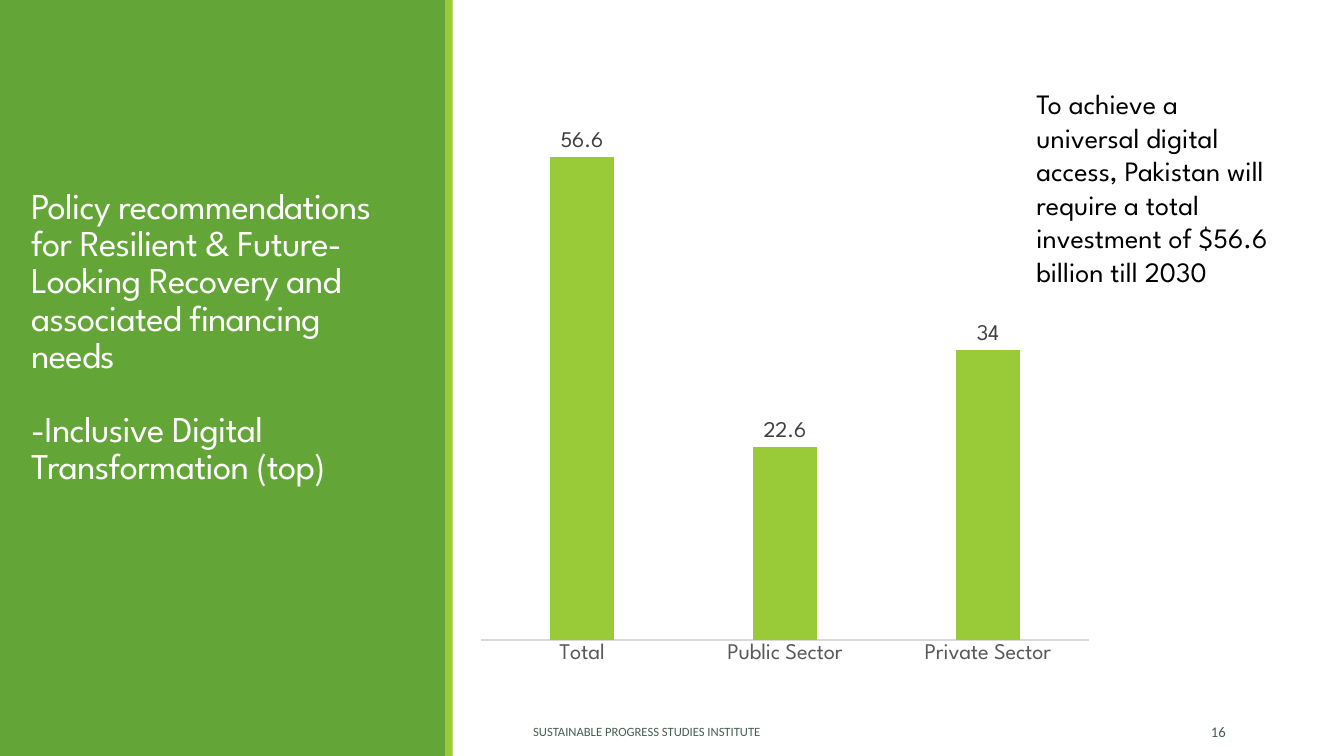
from pptx import Presentation, util as u
from pptx.chart.data import CategoryChartData
from pptx.dml.color import RGBColor
from pptx.enum import chart as ch, shapes, text

WIDTH, HEIGHT = u.Inches(13.33), u.Inches(7.5)
COLUMNS, ROWS = 16, 9

GREEN = RGBColor(0x63, 0xA5, 0x37)
LIME = RGBColor(0x99, 0xCB, 0x38)
WHITE = RGBColor(0xFF, 0xFF, 0xFF)
BLACK = RGBColor(0, 0, 0)
SLATE = RGBColor(0x45, 0x5F, 0x51)
AXIS_GREY = RGBColor(0xD9, 0xD9, 0xD9)
CATEGORY_GREY = RGBColor(0x59, 0x59, 0x59)
VALUE_GREY = RGBColor(0x40, 0x40, 0x40)

DISPLAY, BODY = "League Spartan", "Calibri"


def grid(column, row, columns, rows):
    """Turn grid units into left, top, width and height."""
    across, down = WIDTH / COLUMNS, HEIGHT / ROWS
    return (round(column * across), round(row * down),
            round(columns * across), round(rows * down))


def style_font(font, size, name, color):
    font.size = u.Pt(size)
    font.name = name
    font.color.rgb = color


def add_band(page, area, color):
    band = page.shapes.add_shape(shapes.MSO_SHAPE.RECTANGLE, *grid(*area))
    band.shadow.inherit = False
    band.fill.solid()
    band.fill.fore_color.rgb = color
    band.line.fill.background()


def add_span(para, words, size, name, color):
    span = para.add_run()
    span.text = words
    style_font(span.font, size, name, color)
    return span


def add_text(page, area, words, size, name, color,
             anchor=text.MSO_ANCHOR.TOP, align=text.PP_ALIGN.LEFT):
    box = page.shapes.add_textbox(*grid(*area))
    frame = box.text_frame
    frame.word_wrap = True
    frame.vertical_anchor = anchor
    para = frame.paragraphs[0]
    para.alignment = align
    add_span(para, words, size, name, color)


def fill_title(page, area, parts):
    title = page.shapes.title
    title.left, title.top, title.width, title.height = grid(*area)
    frame = title.text_frame
    frame.word_wrap = True
    frame.auto_size = text.MSO_AUTO_SIZE.NONE
    frame.vertical_anchor = text.MSO_ANCHOR.MIDDLE
    frame.margin_bottom = u.Inches(0.8)
    for index, words in enumerate(parts):
        para = frame.add_paragraph() if index else frame.paragraphs[0]
        para.alignment = text.PP_ALIGN.LEFT
        para.line_spacing = 0.85
        para.space_before = u.Pt(26.6 if index else 0)
        span = add_span(para, words, 26, DISPLAY, WHITE)
        span.font._element.set("spc", "-50")


def add_investment_chart(page, area, investments):
    data = CategoryChartData()
    data.categories = list(investments)
    data.add_series("Series 1", list(investments.values()))
    chart = page.shapes.add_chart(
        ch.XL_CHART_TYPE.COLUMN_CLUSTERED, *grid(*area), data).chart
    style_font(chart.font, 10, BODY, BLACK)
    chart.has_title = False
    chart.has_legend = False

    values = chart.value_axis
    values.minimum_scale, values.maximum_scale = 0, 60
    values.has_major_gridlines = False
    values.visible = False

    sectors = chart.category_axis
    sectors.major_tick_mark = ch.XL_TICK_MARK.NONE
    sectors.format.line.color.rgb = AXIS_GREY
    sectors.format.line.width = u.Pt(0.75)
    style_font(sectors.tick_labels.font, 16, DISPLAY, CATEGORY_GREY)

    plot = chart.plots[0]
    plot.vary_by_categories = False
    plot.gap_width, plot.overlap = 219, -27
    fill = plot.series[0].format.fill
    fill.solid()
    fill.fore_color.rgb = LIME
    plot.has_data_labels = True
    labels = plot.data_labels
    labels.show_value = True
    labels.position = ch.XL_LABEL_POSITION.OUTSIDE_END
    style_font(labels.font, 16, DISPLAY, VALUE_GREY)


def main():
    deck = Presentation()
    deck.slide_width, deck.slide_height = WIDTH, HEIGHT
    page = deck.slides.add_slide(deck.slide_layouts.get_by_name("Title Only"))

    add_band(page, (0, 0, 5.32, ROWS), GREEN)
    add_band(page, (5.3, 0, 0.09, ROWS), LIME)
    # The title placeholder comes first on the page, so lift it over the panel.
    page.shapes._spTree.append(page.shapes.title._element)
    fill_title(page, (0.25, 0.78, 4.64, 7.4), [
        "Policy recommendations for Resilient & Future-Looking Recovery "
        "and associated financing needs",
        "-Inclusive Digital Transformation (top)",
    ])

    middle = text.MSO_ANCHOR.MIDDLE
    add_text(page, (6.23, 8.47, 6.7, 0.48),
             "SUSTAINABLE PROGRESS STUDIES INSTITUTE", 9, BODY, SLATE, middle)
    add_text(page, (13.28, 8.47, 1.43, 0.48), "16", 10.5, BODY, SLATE,
             middle, text.PP_ALIGN.RIGHT)

    add_investment_chart(page, (5.57, 1.39, 7.55, 6.66), {
        "Total": 56.6, "Public Sector": 22.6, "Private Sector": 34})
    add_text(page, (12.22, 0.97, 3.01, 2.95),
             "To achieve a universal digital access, Pakistan will require "
             "a total investment of $56.6 billion till 2030",
             20, DISPLAY, BLACK)

    deck.save("out.pptx")


if __name__ == "__main__":
    main()
